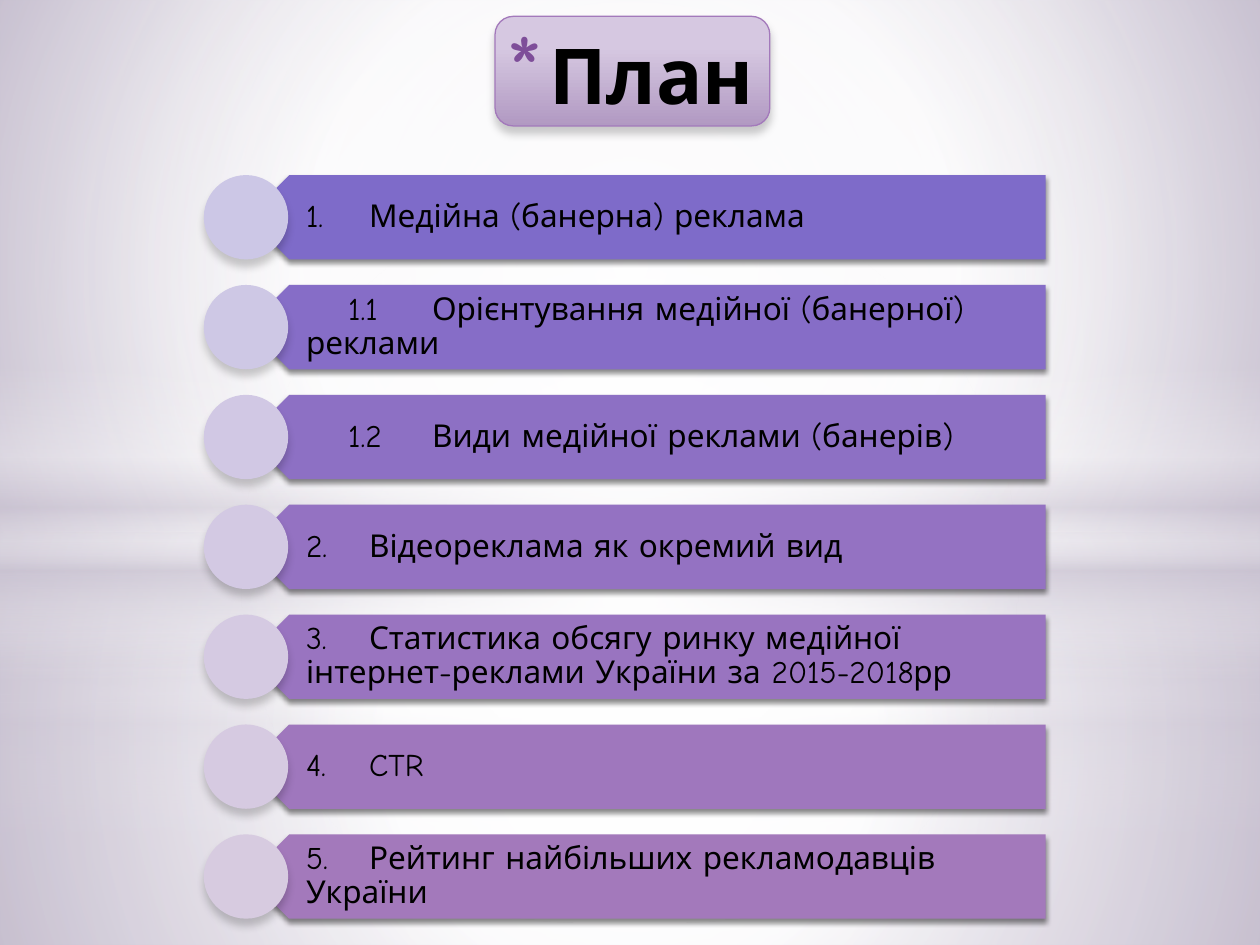
from lxml import etree
from pptx import Presentation
from pptx.dml.color import RGBColor as Rgb
from pptx.enum.shapes import MSO_SHAPE as Form
from pptx.enum.text import MSO_ANCHOR as Anchor, PP_ALIGN as Align
from pptx.oxml import parse_xml
from pptx.oxml.ns import qn
from pptx.util import Cm, Pt

NS = 'xmlns:a="http://schemas.openxmlformats.org/drawingml/2006/main"'
HUES = {"ink": "000000", "white": "FFFFFF", "haze": "C9C2D1",
        "edge": "A379BB", "star": "7E4E99", "top": "D6C8E1", "base": "B199C2",
        "core": "C1B7CD", "rim": "A191B5"}
MID = (50, 50, 50, 50)


class Deck:
    font = "Comic Neue"

    def __init__(self, wide, high):
        self.file = Presentation()
        self.file.slide_width, self.file.slide_height = Cm(wide), Cm(high)
        self.slide = self.file.slides.add_slide(self.file.slide_layouts[6])

    def blend(self, props, stops, focus=None):
        """Replace an empty fill; stops are (position, hue, opacity)."""
        marks = "".join(
            f'<a:gs pos="{pos * 1000}"><a:srgbClr val="{HUES[hue]}">'
            f'<a:alpha val="{seen * 1000}"/></a:srgbClr></a:gs>'
            for pos, hue, seen in stops)
        way = '<a:lin ang="5400000" scaled="0"/>'
        if focus:
            sides = " ".join(f'{k}="{v * 1000}"' for k, v in zip("ltrb", focus))
            way = f'<a:path path="circle"><a:fillToRect {sides}/></a:path>'
        props.replace(props.find(qn("a:noFill")), parse_xml(
            f'<a:gradFill {NS} rotWithShape="1"><a:gsLst>{marks}</a:gsLst>{way}</a:gradFill>'))

    def back(self, stops, focus):
        self.slide.background.fill.background()
        self.blend(self.slide.background._cSld.bg.bgPr, stops, focus)

    def shape(self, form, box, fill, focus=None, line=None, shade=None):
        """Fill is a hex string or a list of gradient stops."""
        item = self.slide.shapes.add_shape(form, *map(Cm, box))
        item.shadow.inherit = False
        if isinstance(fill, str):
            item.fill.solid()
            item.fill.fore_color.rgb = Rgb.from_string(fill)
        else:
            item.fill.background()
            self.blend(item._element.spPr, fill, focus)
        if line:
            item.line.color.rgb = Rgb.from_string(line)
            item.line.width = Pt(0.75)
        else:
            item.line.fill.background()
        if shade:
            seen, blur, dist = shade
            item._element.spPr.find(qn("a:effectLst")).append(parse_xml(
                f'<a:outerShdw {NS} blurRad="{Pt(blur)}" dist="{Pt(dist)}" dir="5400000" '
                f'rotWithShape="0"><a:srgbClr val="{HUES["ink"]}">'
                f'<a:alpha val="{seen * 1000}"/></a:srgbClr></a:outerShdw>'))
        return item

    def text(self, box, words, size, anchor, pads, bold=False):
        frame = self.slide.shapes.add_textbox(*map(Cm, box)).text_frame
        frame.word_wrap = True
        frame.vertical_anchor = anchor
        (frame.margin_left, frame.margin_top,
         frame.margin_right, frame.margin_bottom) = map(Cm, pads)
        para = frame.paragraphs[0]
        para.text = words
        para.font.name, para.font.size, para.font.bold = self.font, Pt(size), bold
        para.font.color.rgb = Rgb.from_string(HUES["ink"])
        return para

    def tab(self, para, start, stop):
        """Indent the first line and set the stop after its number."""
        props = para._p.get_or_add_pPr()
        props.set("marL", "0")
        props.set("indent", str(Cm(start)))
        props.find(qn("a:defRPr")).addprevious(parse_xml(
            f'<a:tabLst {NS}><a:tab pos="{Cm(stop)}" algn="l"/></a:tabLst>'))

    def bullet(self, para, sign, hue, size, hang):
        props = para._p.get_or_add_pPr()
        props.set("marL", str(Cm(hang)))
        props.set("indent", str(-Cm(hang)))
        marks = parse_xml(
            f'<a:pPr {NS}><a:buClr><a:srgbClr val="{hue}"/></a:buClr>'
            f'<a:buSzPct val="{size * 1000}"/><a:buFont typeface="{self.font}"/>'
            f'<a:buChar char="{sign}"/></a:pPr>')
        for mark in list(marks):
            props.find(qn("a:defRPr")).addprevious(mark)


def main():
    deck = Deck(25.4, 19.05)

    # Background: two rounds of soft light, each with floor, sky, band and glow
    deck.back([(0, "core", 100), (60, "white", 100), (100, "rim", 100)], (20, 10, 20, 60))
    band = [(0, "white", 0), (29, "white", 30), (45, "haze", 40),
            (55, "white", 26), (65, "haze", 60), (100, "white", 0)]
    for split, strip, lift, fade in ((14.17, 10.46, 0, 56), (10.74, 7.37, 1, 54)):
        floor = [(0, "white", 91 + lift), (37, "white", 76 + lift), (100, "haze", 79 + lift)]
        sky = [(0, "white", 89 + lift), (48, "white", 62 + lift), (100, "haze", 79 + lift)]
        glow = [(0, "white", 100), (fade, "white", 0)]
        deck.shape(Form.RECTANGLE, (0, split, 25.4, 19.05 - split), floor, MID)
        deck.shape(Form.RECTANGLE, (0, 0, 25.4, split), sky, MID)
        deck.shape(Form.RECTANGLE, (0, strip, 25.4, 6.35), band)
        deck.shape(Form.OVAL, (0, 4.45, 25.4, 14.17), glow, MID)

    # Plan rows: words, bar colour, dot colour, depth
    rows = [
        ("1.\tМедійна (банерна) реклама", "7E6BC9", "CCC7E6", 0),
        ("1.1\tОрієнтування медійної (банерної) реклами", "866DC7", "CEC8E5", 1),
        ("1.2\tВиди медійної реклами (банерів)", "8D70C4", "D1C8E4", 1),
        ("2.\tВідеореклама як окремий вид", "9472C2", "D3C9E3", 0),
        ("3.\tСтатистика обсягу ринку медійної інтернет-реклами України за 2015-2018рр",
         "9974C0", "D5CAE2", 0),
        ("4.\tCTR", "9F77BD", "D6CAE1", 0),
        ("5.\tРейтинг найбільших рекламодавців України", "A379BB", "D7CBE0", 0),
    ]
    size = 1.7
    for i, (words, bar, dot, depth) in enumerate(rows):
        top = 3.53 + 2.215 * i
        plate = deck.shape(Form.PENTAGON, (4.98, top, 16.1, size), bar, shade=(45, 3.1, 1.8))
        plate.rotation = 180
        para = deck.text((5.41, top, 15.67, size), words, 18, Anchor.MIDDLE,
                         (0.76, 0.18, 0.36, 0.18))
        para.line_spacing = 0.9
        deck.tab(para, 0.85 * depth, 1.27 + 1.08 * depth)
        deck.shape(Form.OVAL, (4.11, top, size, size), dot, shade=(20, 5, 4))

    # Title
    deck.shape(Form.ROUNDED_RECTANGLE, (9.98, 0.33, 5.54, 2.21),
               [(28, "top", 100), (100, "base", 100)], line=HUES["edge"], shade=(20, 5, 4))
    title = deck.text((9.8, 0.53, 5.79, 2.01), "План", 44, Anchor.BOTTOM,
                      (0.25, 0.13, 0.25, 0.13), bold=True)
    title.alignment = Align.CENTER
    deck.bullet(title, "*", HUES["star"], 128, 0.89)

    deck.file.save("out.pptx")


if __name__ == "__main__":
    main()
